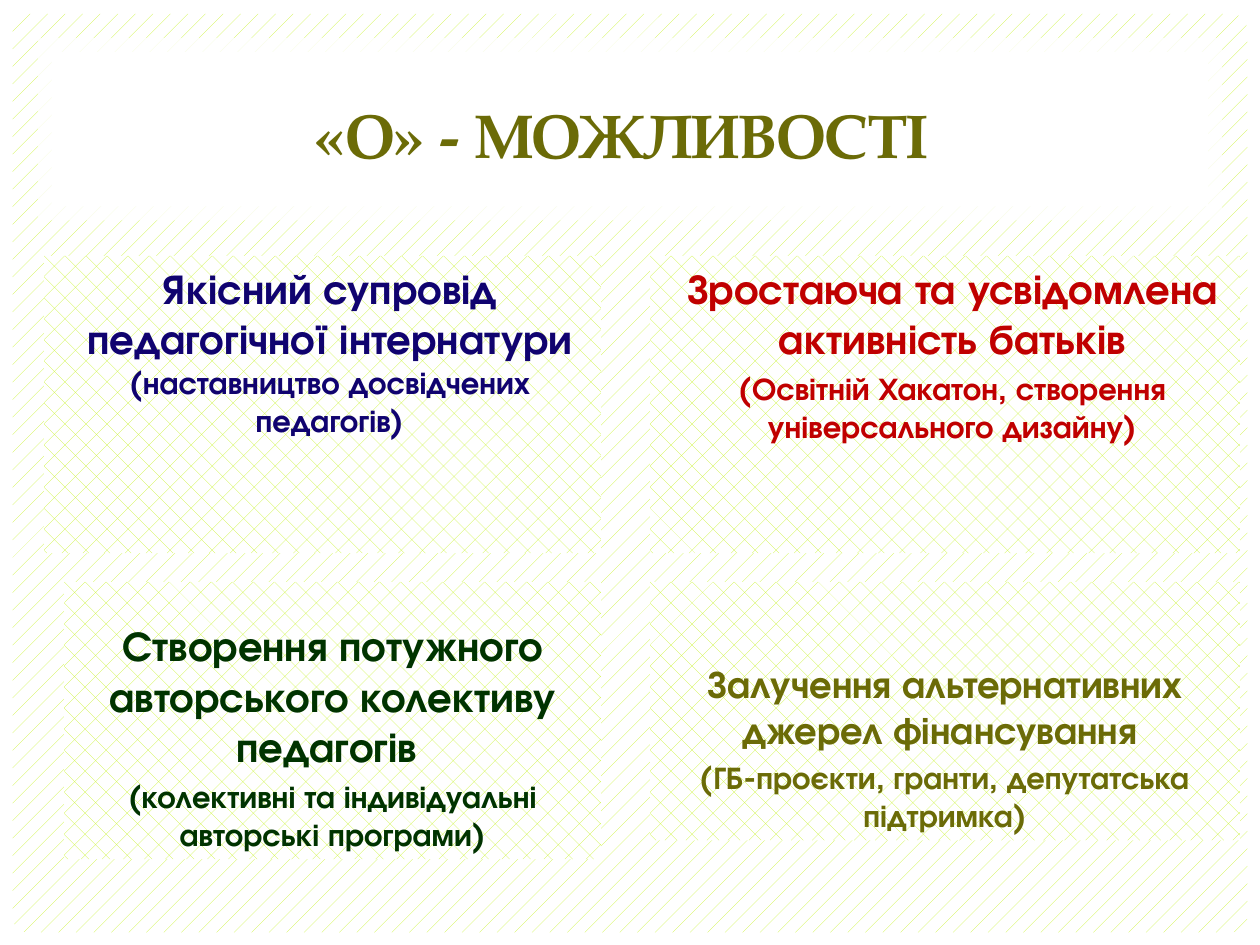
from pptx import Presentation
from pptx.dml.color import RGBColor
from pptx.enum.dml import MSO_PATTERN as Pattern
from pptx.enum.shapes import MSO_SHAPE as Shape
from pptx.enum.text import MSO_ANCHOR as Anchor, MSO_AUTO_SIZE as AutoSize, PP_ALIGN as Align
from pptx.oxml.ns import qn
from pptx.util import Pt
from lxml import etree

HEAD_FONT = "TeX Gyre Pagella"
BODY_FONT = "TeX Gyre Adventor"
LIME, WHITE, OLIVE = "CAF430", "FFFFFF", "6B6B07"
TOP, BOTTOM = Anchor.TOP, Anchor.BOTTOM

# box, anchor, left indent, colour, paragraphs of (text, size) runs
QUADRANTS = [
    ((25.2, 146.2, 318.2, 169.9), TOP, 8.6, "10036F",
     [[("Якісний супровід педагогічної інтернатури ", 24),
       ("(наставництво досвідчених педагогів)", 18)]]),
    ((371.5, 146.2, 337, 169.9), TOP, 8.6, "C00000",
     [[("Зростаюча та усвідомлена активність батьків", 24)],
      [("(Освітній Хакатон, створення універсального дизайну)", 18)]]),
    ((36.7, 332.6, 306.7, 158.4), BOTTOM, 0, "003300",
     [[("Створення потужного авторського колективу педагогів ", 24)],
      [("(колективні та індивідуальні авторські програми)", 18)]]),
    ((371.5, 332.6, 337, 147.6), BOTTOM, 0, OLIVE,
     [[("Залучення альтернативних джерел фінансування ", 22)],
      [("(ГБ-проєкти, гранти, депутатська підтримка)", 18)]]),
]


def rgb(code):
    return RGBColor.from_string(code)


def fill_pattern(fill, pattern):
    fill.patterned()
    fill.pattern = pattern
    fill.fore_color.rgb = rgb(LIME)
    fill.back_color.rgb = rgb(WHITE)


def place(shape, box):
    shape.left, shape.top, shape.width, shape.height = map(Pt, box)


def add_run(para, text, font, size, color):
    span = para.add_run()
    span.text = text
    span.font.name = font
    span.font.size = Pt(size)
    span.font.bold = True
    span.font.color.rgb = rgb(color)


def prepare_frame(frame, anchor):
    frame.word_wrap = True
    frame.auto_size = AutoSize.NONE
    frame.vertical_anchor = anchor


def add_panel(page, box, kind=Shape.RECTANGLE):
    """Add a white panel behind the placeholders."""
    panel = page.shapes.add_shape(kind, *map(Pt, box))
    panel.shadow.inherit = False
    panel.line.fill.background()
    panel.fill.solid()
    panel.fill.fore_color.rgb = rgb(WHITE)
    page.shapes.title.element.addprevious(panel.element)
    return panel


def add_backdrop(page, width, height):
    fill_pattern(page.background.fill, Pattern.PERCENT_5)
    add_panel(page, (0, 0, width, height))
    card = add_panel(page, (7.2, 7.9, width - 14.4, height - 15.1), Shape.ROUNDED_RECTANGLE)
    card.adjustments[0] = 0.017
    fill_pattern(card.fill, Pattern.PERCENT_5)


def add_banner(page, left, top, width, height):
    """Draw the title band and fill in the title."""
    border = add_panel(page, (left, top, width, height))
    color = border.element.spPr.find(qn("a:solidFill"))[0]
    etree.SubElement(color, qn("a:alpha"), val="83000")
    add_panel(page, (left + 8, top + 8, width - 16, height - 16))
    title = page.shapes.title
    place(title, (left + 96.5, top + 13.7, 473.8, 82.1))
    prepare_frame(title.text_frame, Anchor.MIDDLE)
    para = title.text_frame.paragraphs[0]
    para.alignment = Align.CENTER
    add_run(para, "«О» - МОЖЛИВОСТІ", HEAD_FONT, 35, OLIVE)


def fill_quadrant(body, box, anchor, indent, color, paragraphs):
    place(body, box)
    fill_pattern(body.fill, Pattern.DOTTED_DIAMOND)
    frame = body.text_frame
    prepare_frame(frame, anchor)
    for number, runs in enumerate(paragraphs):
        para = frame.add_paragraph() if number else frame.paragraphs[0]
        para.alignment = Align.CENTER
        props = para._p.get_or_add_pPr()
        props.set("marL", str(Pt(indent)))
        props.set("indent", "0")
        etree.SubElement(props, qn("a:buNone"))
        for text, size in runs:
            add_run(para, text, BODY_FONT, size, color)


def main():
    deck = Presentation()
    deck.slide_width, deck.slide_height = Pt(720), Pt(540)
    comparison = deck.slide_layouts[4]
    page = deck.slides.add_slide(comparison)
    add_backdrop(page, 720, 540)
    add_banner(page, 21.6, 21.6, 676.8, 104.4)
    bodies = [item for item in page.placeholders if item.placeholder_format.idx]
    for body, quadrant in zip(bodies, QUADRANTS):
        fill_quadrant(body, *quadrant)
    deck.save("out.pptx")


if __name__ == "__main__":
    main()
